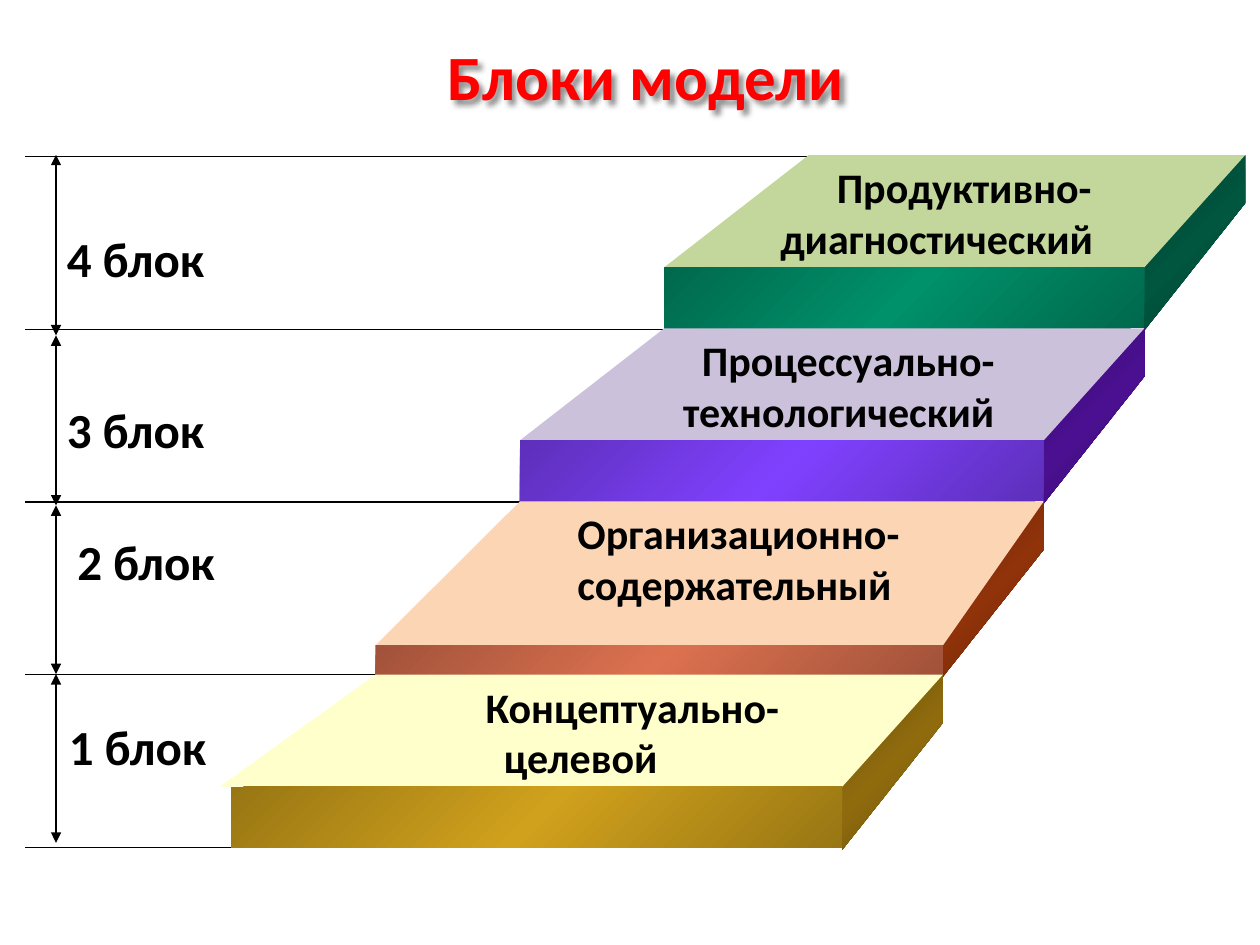
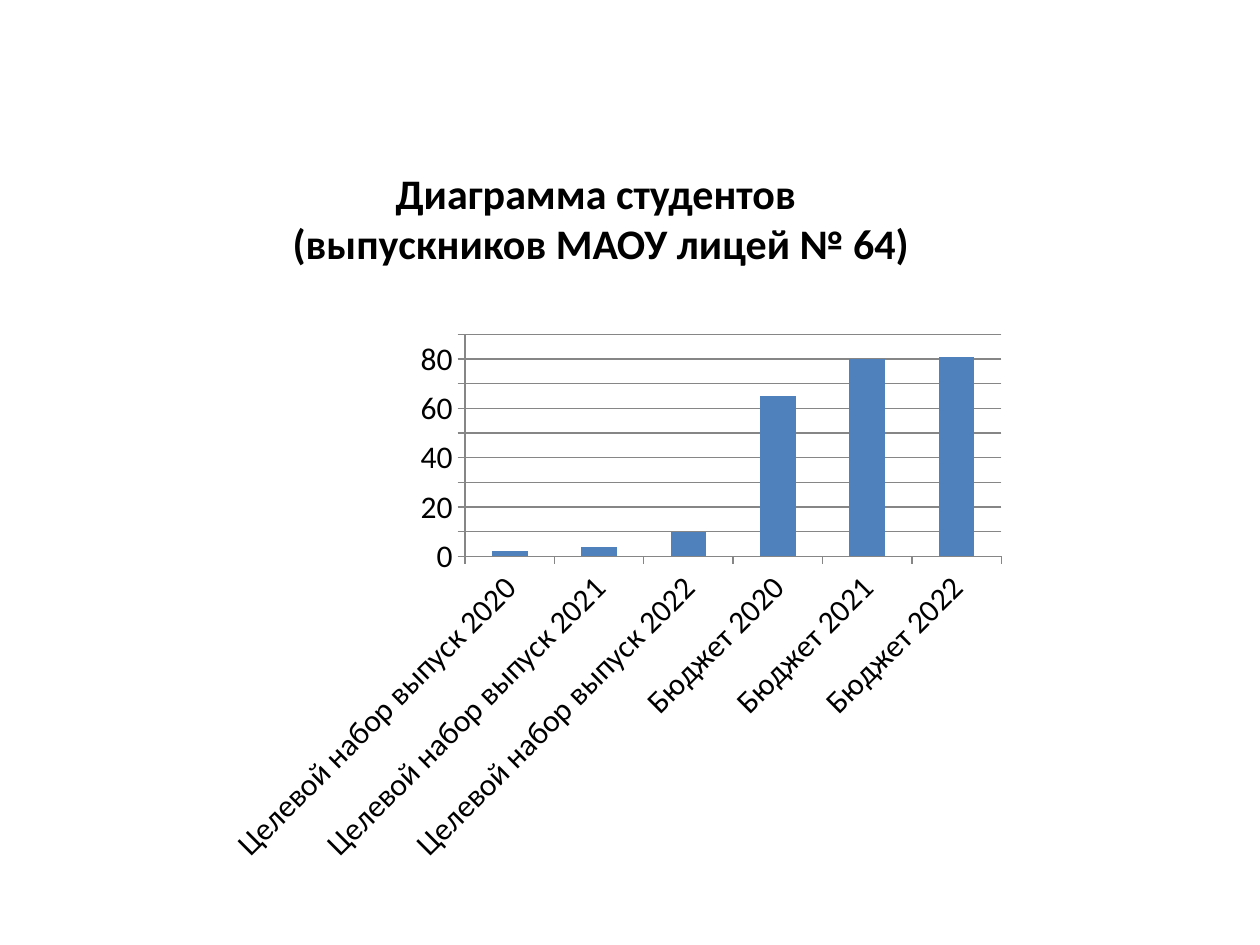
import copy

import pptx
import pptx.chart.data
import pptx.dml.color
import pptx.enum.chart
import pptx.enum.shapes
import pptx.enum.text
import pptx.oxml
import pptx.oxml.ns
import pptx.util

Cm = pptx.util.Cm
Pt = pptx.util.Pt
ALIGN = pptx.enum.text.PP_ALIGN
ANCHOR = pptx.enum.text.MSO_ANCHOR

FONT = "Calibri"
BLACK, RED, GRID_GREY, BAR_BLUE = "000000", "FF0000", "868686", "4F81BD"
TITLE_SHADOW = ('<a:outerShdw blurRad="38100" dist="38100" dir="2700000" algn="tl">'
                '<a:srgbClr val="000000"><a:alpha val="43000"/></a:srgbClr></a:outerShdw>')

# Levels from top to bottom; each caption line has its left edge in cm.
LEVELS = [
    {"label": "4 блок", "label_at": (1.09, 4.47), "face": "C3D69B",
     "front": ("00694D", "00906A"), "side": ("003E2D", "00563F"),
     "caption": [("Продуктивно-", 16.87), ("диагностический", 15.73)]},
    {"label": "3 блок", "label_at": (1.09, 7.92), "face": "CCC1DA",
     "front": ("5D2FBA", "8041FF"), "side": ("360B68", "4B1092"),
     "caption": [("Процессуально-", 14.15), ("технологический", 13.77)]},
    {"label": "2 блок", "label_at": (1.3, 10.59), "face": "FCD5B5",
     "front": ("A1523A", "DC7150"), "side": ("672407", "90330A"), "face_height": 2.9,
     "caption": [("Организационно-", 11.64), ("содержательный", 11.64)]},
    {"label": "1 блок", "label_at": (1.13, 14.32), "face": "FFFFCC",
     "front": ("987614", "D0A11C"), "side": ("674D0A", "906B0E"), "overhang": 0.23,
     "caption": [("Концептуально-", 9.79), ("целевой", 10.16)]},
]
STAIR_TOP, RISE = 3.13, 3.49
FRONT_LEFT, FRONT_RIGHT = 13.39, 23.07
LEFT_SHIFT, RIGHT_SHIFT = 2.91, 2.03
FACE_HEIGHT = 2.26
RULE_TOP, RULE_PITCH, RULE_LEFT = 3.16, 3.48, 0.51
ARROW_X = 1.13
ARROW_ENDS = [3.12, 6.76, 10.19, 13.59, 16.99]

STUDENTS = [
    ("Целевой набор выпуск 2020", 2),
    ("Целевой набор выпуск 2021", 4),
    ("Целевой набор выпуск 2022", 10),
    ("Бюджет 2020", 65),
    ("Бюджет 2021", 80),
    ("Бюджет 2022", 81),
]


def rgb(code):
    return pptx.dml.color.RGBColor.from_string(code)


def add_effects(shape, effect=""):
    """Give a shape its own effect list, empty unless an effect is named."""
    shape._element.spPr.append(pptx.oxml.parse_xml(
        f'<a:effectLst {pptx.oxml.ns.nsdecls("a")}>{effect}</a:effectLst>'))


def write_lines(frame, lines, size, color=BLACK, align=ALIGN.LEFT, anchor=ANCHOR.TOP):
    """Write (text, indent in cm) lines, one paragraph each."""
    frame.word_wrap = True
    frame.vertical_anchor = anchor
    frame.margin_left = frame.margin_right = 0
    frame.margin_top = frame.margin_bottom = Cm(0.13)
    for number, (text, indent) in enumerate(lines):
        para = frame.add_paragraph() if number else frame.paragraphs[0]
        para.alignment = align
        para._p.get_or_add_pPr().set("marL", str(Cm(indent)))
        span = para.add_run()
        span.text = text
        span.font.name, span.font.size, span.font.bold = FONT, Pt(size), True
        span.font.color.rgb = rgb(color)


def add_text(page, area, lines, size, **style):
    box = page.shapes.add_textbox(*(Cm(length) for length in area))
    write_lines(box.text_frame, lines, size, **style)
    return box


def add_title(page, area, lines, size, color=BLACK):
    return add_text(page, area, lines, size, color=color,
                    align=ALIGN.CENTER, anchor=ANCHOR.MIDDLE)


def paint(shape, *colors):
    """Fill with one colour, or with an edge-middle-edge diagonal gradient."""
    shape.shadow.inherit = False
    shape.line.fill.background()
    if len(colors) == 1:
        shape.fill.solid()
        shape.fill.fore_color.rgb = rgb(colors[0])
        return
    edge, middle = colors
    shape.fill.gradient()
    shape.fill.gradient_angle = 315
    stop_list = shape._element.spPr.find(".//" + pptx.oxml.ns.qn("a:gsLst"))
    stop_list.append(copy.deepcopy(stop_list[0]))
    for stop, place, color in zip(shape.fill.gradient_stops, (0, 0.5, 1), (edge, middle, edge)):
        stop.position = place
        stop.color.rgb = rgb(color)


def add_polygon(page, points):
    (start_x, start_y), *rest = [(Cm(x), Cm(y)) for x, y in points]
    builder = page.shapes.build_freeform(start_x, start_y)
    builder.add_line_segments(rest, close=True)
    return builder.convert_to_shape()


def add_line(page, start, end, arrows=False):
    line = page.shapes.add_connector(
        pptx.enum.shapes.MSO_CONNECTOR.STRAIGHT, *(Cm(length) for length in start + end))
    line.line.color.rgb = rgb(BLACK)
    line.line.width = Pt(0.75)
    if arrows:
        for end_name in ("headEnd", "tailEnd"):
            line.line._get_or_add_ln().append(pptx.oxml.parse_xml(
                f'<a:{end_name} {pptx.oxml.ns.nsdecls("a")} type="triangle"/>'))
    add_effects(line)


def add_level(page, number, level):
    """Draw one stair: side, top face with caption, and front."""
    top = STAIR_TOP + number * RISE
    left = FRONT_LEFT - number * LEFT_SHIFT
    right = FRONT_RIGHT - number * RIGHT_SHIFT
    back_left, back_right = left + LEFT_SHIFT, right + RIGHT_SHIFT
    edge = top + level.get("face_height", FACE_HEIGHT)
    face_left = left - level.get("overhang", 0)

    side = add_polygon(page, [(back_right, top), (back_right, top + 0.97),
                              (right, top + 3.53), (right, top + FACE_HEIGHT)])
    paint(side, *level["side"])

    face = add_polygon(page, [(back_left, top), (back_right, top),
                              (right, edge), (face_left, edge)])
    paint(face, level["face"])
    write_lines(face.text_frame,
                [(text, x - face_left) for text, x in level["caption"]], 24)

    front = page.shapes.add_shape(
        pptx.enum.shapes.MSO_SHAPE.RECTANGLE, Cm(left), Cm(edge),
        Cm(right - left), Cm(top + RISE - edge))
    paint(front, *level["front"])


def build_model_page(page):
    title = add_title(page, (1.9, 0.33, 22.23, 2.39), [("Блоки модели", 0)], 36, RED)
    add_effects(title, TITLE_SHADOW)
    for number in range(len(LEVELS) + 1):
        y = RULE_TOP + number * RULE_PITCH
        add_line(page, (RULE_LEFT, y), (FRONT_LEFT + (1 - number) * LEFT_SHIFT, y))
    for start, end in zip(ARROW_ENDS, ARROW_ENDS[1:]):
        add_line(page, (ARROW_X, start), (ARROW_X, end), arrows=True)
    for number, level in enumerate(LEVELS):
        add_level(page, number, level)
        x, y = level["label_at"]
        add_text(page, (x + 0.26, y, 3.3, 1.45), [(level["label"], 0)], 28)


def build_students_page(page):
    add_title(page, (0.49, 2.39, 23.04, 4),
              [("Диаграмма студентов", 0), ("(выпускников МАОУ лицей № 64)", 0.2)], 24)
    data = pptx.chart.data.CategoryChartData()
    data.categories = [name for name, _ in STUDENTS]
    data.add_series("Series 1", [count for _, count in STUDENTS])
    chart = page.shapes.add_chart(
        pptx.enum.chart.XL_CHART_TYPE.COLUMN_CLUSTERED,
        Cm(4.3), Cm(6.52), Cm(16.21), Cm(11.1), data).chart
    chart.has_title = chart.has_legend = False
    chart.font.name, chart.font.size = FONT, Pt(18)
    chart.font.color.rgb = rgb(BLACK)

    plot = chart.plots[0]
    plot.gap_width = 150
    plot.vary_by_categories = False
    bars = plot.series[0].format.fill
    bars.solid()
    bars.fore_color.rgb = rgb(BAR_BLUE)

    values = chart.value_axis
    values.has_major_gridlines = True
    for axis in (values, chart.category_axis):
        axis.major_tick_mark = pptx.enum.chart.XL_TICK_MARK.OUTSIDE
    for part in (values, chart.category_axis, values.major_gridlines):
        part.format.line.color.rgb = rgb(GRID_GREY)
        part.format.line.width = Pt(0.75)


def main():
    deck = pptx.Presentation()
    deck.slide_width, deck.slide_height = Cm(25.4), Cm(19.05)
    for build in (build_model_page, build_students_page):
        build(deck.slides.add_slide(deck.slide_layouts[6]))
    deck.save("out.pptx")


if __name__ == "__main__":
    main()
